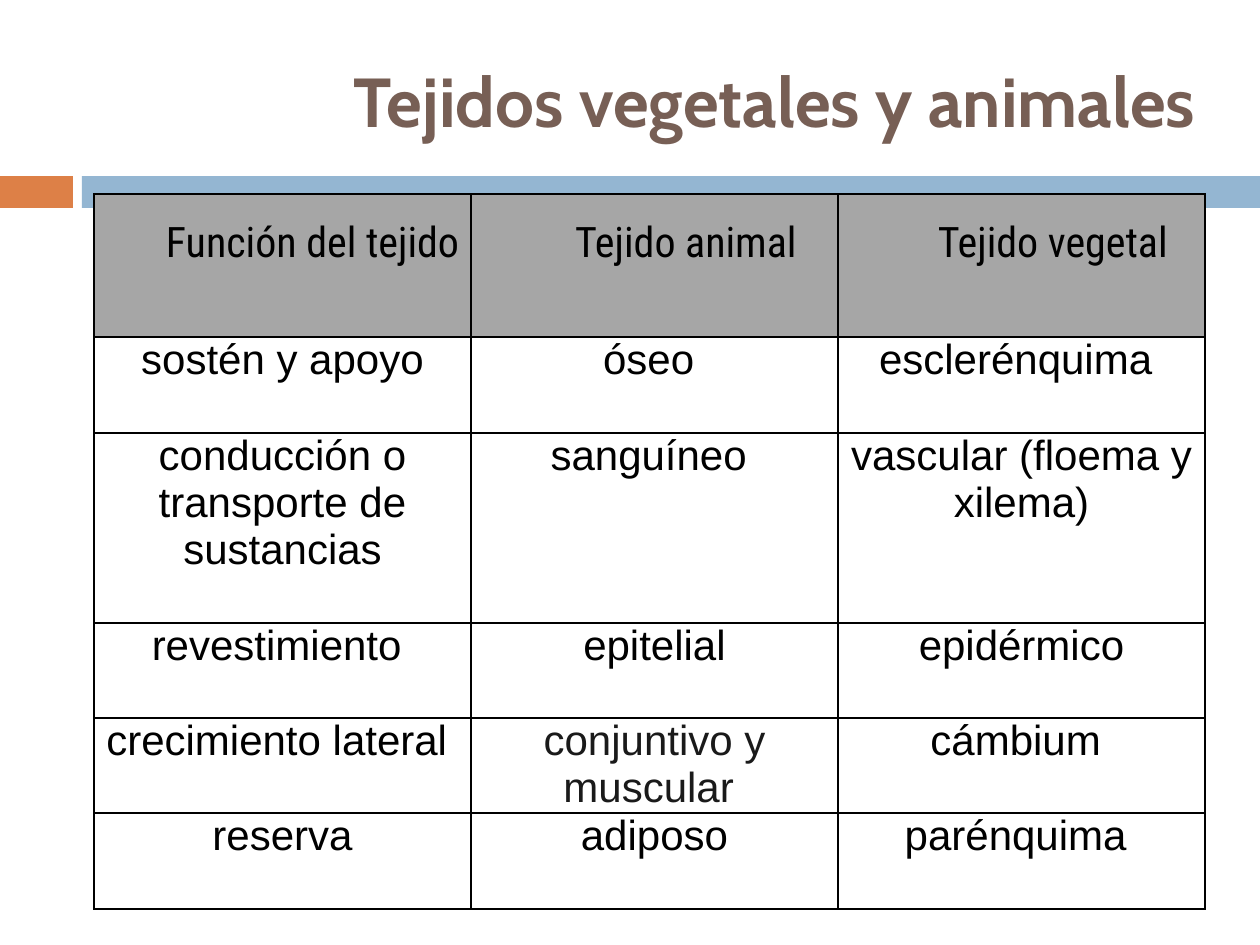
from pptx import Presentation
from pptx.dml.color import RGBColor
from pptx.enum.shapes import MSO_SHAPE as Shape
from pptx.enum.text import MSO_ANCHOR as Anchor, MSO_AUTO_SIZE as AutoSize, PP_ALIGN as Align
from pptx.util import Pt
from lxml.etree import SubElement

TITLE = "Tejidos vegetales y animales"
TITLE_BOX = (84, 32, 1124, 136)
BARS = [((0, 176, 73, 32), "DD8047"), ((82, 176, 1178, 32), "94B6D2")]
ROWS = [
    ("Función del tejido", "Tejido animal", "Tejido vegetal"),
    ("sostén y apoyo", "óseo ", "esclerénquima "),
    ("conducción o transporte de sustancias", "sanguíneo ", "vascular (floema y xilema)"),
    ("revestimiento ", "epitelial", "epidérmico"),
    ("crecimiento lateral ", "conjuntivo y muscular ", "cámbium "),
    ("reserva", "adiposo", "parénquima "),
]
TABLE_AT = (94, 194)
COLUMN_WIDTHS = [377, 367, 367]
ROW_HEIGHTS = [143, 96, 190, 95, 95, 96]
TEXT_COLORS = {(4, 1): "1A1A1A"}
TITLE_FONT = {"name": "Cabin", "size": Pt(39.6), "bold": True}
HEADER_FONT = {"name": "Roboto Condensed", "size": Pt(24), "bold": False}
BODY_FONT = {"name": "Arial", "size": Pt(24), "bold": False}
HEADER_PARA = {"line_spacing": 1.5, "space_before": Pt(6)}
BODY_PARA = {"space_before": Pt(6)}
NAMESPACE = "{http://schemas.openxmlformats.org/drawingml/2006/main}"


def px(length):
    return round(length * 914400 / 126)


def color(value):
    return RGBColor.from_string(value)


def assign(target, values):
    for name, value in values.items():
        setattr(target, name, value)


def write(para, text, font, text_color):
    span = para.add_run()
    span.text = text
    assign(span.font, font)
    span.font.color.rgb = color(text_color)


def add_borders(cell):
    properties = cell._tc.get_or_add_tcPr()
    for index, side in enumerate(("lnL", "lnR", "lnT", "lnB")):
        line = properties.makeelement(NAMESPACE + side, {"w": str(Pt(1))})
        properties.insert(index, line)
        fill = SubElement(line, NAMESPACE + "solidFill")
        SubElement(fill, NAMESPACE + "srgbClr", val="000000")


def add_title(page):
    box = page.shapes.title
    assign(box, dict(zip(("left", "top", "width", "height"), map(px, TITLE_BOX))))
    frame = box.text_frame
    assign(frame, {"vertical_anchor": Anchor.MIDDLE, "word_wrap": True,
                   "auto_size": AutoSize.NONE})
    para = frame.paragraphs[0]
    para.alignment = Align.RIGHT
    write(para, TITLE, TITLE_FONT, "775F55")


def add_bars(page):
    for place, fill in BARS:
        bar = page.shapes.add_shape(Shape.RECTANGLE, *map(px, place))
        bar.shadow.inherit = False
        bar.fill.solid()
        bar.fill.fore_color.rgb = color(fill)
        bar.line.fill.background()


def fill_cell(cell, text, row, column):
    is_header = row == 0
    assign(cell, {"margin_left": px(9), "margin_right": px(9),
                  "margin_top": 0, "margin_bottom": 0})
    para = cell.text_frame.paragraphs[0]
    para.alignment = Align.LEFT if is_header and column == 0 else Align.CENTER
    assign(para, HEADER_PARA if is_header else BODY_PARA)
    if is_header:
        para._p.get_or_add_pPr().set("marL", str(px(63)))
        cell.fill.solid()
        cell.fill.fore_color.rgb = color("A6A6A6")
    else:
        cell.fill.background()
    write(para, text, HEADER_FONT if is_header else BODY_FONT,
          TEXT_COLORS.get((row, column), "000000"))
    add_borders(cell)


def add_tissue_table(page):
    size = (sum(COLUMN_WIDTHS), sum(ROW_HEIGHTS))
    table = page.shapes.add_table(len(ROWS), len(COLUMN_WIDTHS),
                                  *map(px, TABLE_AT + size)).table
    table.horz_banding = False
    for column, width in zip(table.columns, COLUMN_WIDTHS):
        column.width = px(width)
    for row, height in zip(table.rows, ROW_HEIGHTS):
        row.height = px(height)
    for row, texts in enumerate(ROWS):
        for column, text in enumerate(texts):
            fill_cell(table.cell(row, column), text, row, column)


def main():
    deck = Presentation()
    assign(deck, {"slide_width": px(1260), "slide_height": px(945)})
    page = deck.slides.add_slide(deck.slide_layouts[5])
    add_bars(page)
    add_title(page)
    add_tissue_table(page)
    deck.save("out.pptx")


if __name__ == "__main__":
    main()
